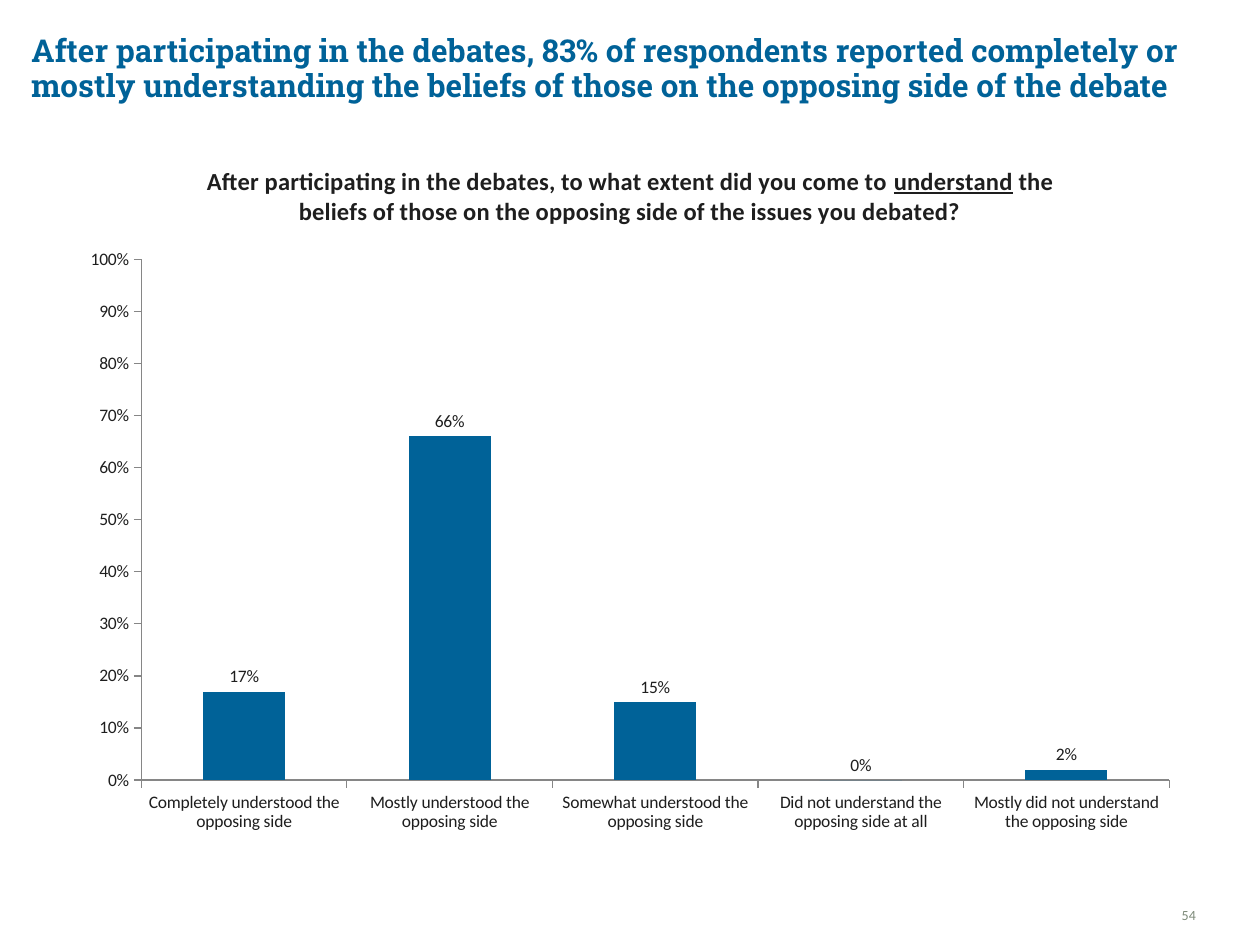
import pptx
import pptx.chart.data
import pptx.dml.color
import pptx.enum.chart
import pptx.enum.text
import pptx.oxml
import pptx.util
from pptx.util import Pt

BLUE, INK, AXIS_GRAY, PAGE_GRAY = "006298", "1E1E1E", "868686", "7E8B7A"
ANSWERS = {
    "Completely understood the opposing side": 0.17,
    "Mostly understood the opposing side": 0.66,
    "Somewhat understood the opposing side": 0.15,
    "Did not understand the opposing side at all": 0,
    "Mostly did not understand the opposing side": 0.02,
}
QUESTION = [
    ("After participating in the debates, to what extent did you come to ", False),
    ("understand", True),
    (" the beliefs of those on the opposing side of the issues you debated?", False),
]


def color(value):
    return pptx.dml.color.RGBColor.from_string(value)


def set_font(font, name, size, fill, bold=False):
    font.name, font.size, font.bold = name, Pt(size), bold
    font.color.rgb = color(fill)


def add_text(page, box, text, anchor):
    """Add a one-paragraph text box; return its frame and paragraph."""
    frame = page.shapes.add_textbox(*map(Pt, box)).text_frame
    frame.word_wrap = True
    frame.vertical_anchor = anchor
    para = frame.paragraphs[0]
    para.text = text
    return frame, para


def add_heading(page, box):
    text = ("After participating in the debates, 83% of respondents reported completely or "
            "mostly understanding the beliefs of those on the opposing side of the debate")
    frame, para = add_text(page, box, text, pptx.enum.text.MSO_ANCHOR.MIDDLE)
    para.line_spacing = 0.93
    set_font(para.font, "Roboto Slab", 18, BLUE, True)


def add_page_number(page, box):
    frame, para = add_text(page, box, "54", pptx.enum.text.MSO_ANCHOR.BOTTOM)
    frame.margin_left = frame.margin_right = frame.margin_top = frame.margin_bottom = 0
    para.alignment = pptx.enum.text.PP_ALIGN.RIGHT
    set_font(para.font, "Calibri", 8, PAGE_GRAY)


def add_question(chart):
    chart.has_title = True
    para = chart.chart_title.text_frame.paragraphs[0]
    set_font(para.font, "Calibri", 14, INK, True)
    for text, underlined in QUESTION:
        span = para.add_run()
        span.text = text
        set_font(span.font, "Calibri", 14, INK, True)
        span.font.underline = underlined
    chart.chart_title.include_in_layout = False


def style_axis(axis):
    axis.has_major_gridlines = False
    axis.major_tick_mark = pptx.enum.chart.XL_TICK_MARK.OUTSIDE
    axis.minor_tick_mark = pptx.enum.chart.XL_TICK_MARK.NONE
    axis.format.line.color.rgb = color(AXIS_GRAY)
    axis.format.line.width = Pt(0.75)


def place_plot(chart, x, y, w, h):
    """Fix the inner plot area, in fractions of the chart."""
    plot_area = chart._chartSpace.chart.plotArea
    for old in plot_area.findall(pptx.oxml.ns.qn("c:layout")):
        plot_area.remove(old)
    sizes = "".join(f'<c:{key} val="{value}"/>'
                    for key, value in (("x", x), ("y", y), ("w", w), ("h", h)))
    plot_area.insert(0, pptx.oxml.parse_xml(
        f'<c:layout {pptx.oxml.ns.nsdecls("c")}><c:manualLayout>'
        '<c:layoutTarget val="inner"/><c:xMode val="edge"/><c:yMode val="edge"/>'
        f'{sizes}</c:manualLayout></c:layout>'))


def add_answer_chart(page, box):
    data = pptx.chart.data.CategoryChartData(number_format="0%")
    data.categories = list(ANSWERS)
    data.add_series("Series 1", list(ANSWERS.values()))
    kind = pptx.enum.chart.XL_CHART_TYPE.COLUMN_CLUSTERED
    chart = page.shapes.add_chart(kind, *map(Pt, box), data).chart
    set_font(chart.font, "Calibri", 10, INK)
    chart.has_legend = False
    add_question(chart)

    style_axis(chart.category_axis)
    scale = chart.value_axis
    style_axis(scale)
    scale.minimum_scale, scale.maximum_scale, scale.major_unit = 0, 1, 0.1
    scale.tick_labels.number_format = "0%"
    scale.tick_labels.number_format_is_linked = False

    plot = chart.plots[0]
    plot.gap_width = 150
    plot.vary_by_categories = False
    fill = plot.series[0].format.fill
    fill.solid()
    fill.fore_color.rgb = color(BLUE)
    plot.has_data_labels = True
    labels = plot.data_labels
    labels.show_value = True
    labels.number_format = "0%"
    labels.number_format_is_linked = False
    labels.position = pptx.enum.chart.XL_LABEL_POSITION.OUTSIDE_END
    place_plot(chart, 0.065, 0.17, 0.915, 0.74)


def main():
    deck = pptx.Presentation()
    deck.slide_width, deck.slide_height = Pt(720), Pt(540)
    page = deck.slides.add_slide(deck.slide_layouts[6])
    page.background.fill.solid()
    page.background.fill.fore_color.rgb = color("FFFFFF")
    add_heading(page, (10.8, 14.4, 699, 50.4))
    add_page_number(page, (646, 509, 37.4, 18.7))
    add_answer_chart(page, (39, 80, 642, 402))
    deck.save("out.pptx")


if __name__ == "__main__":
    main()
